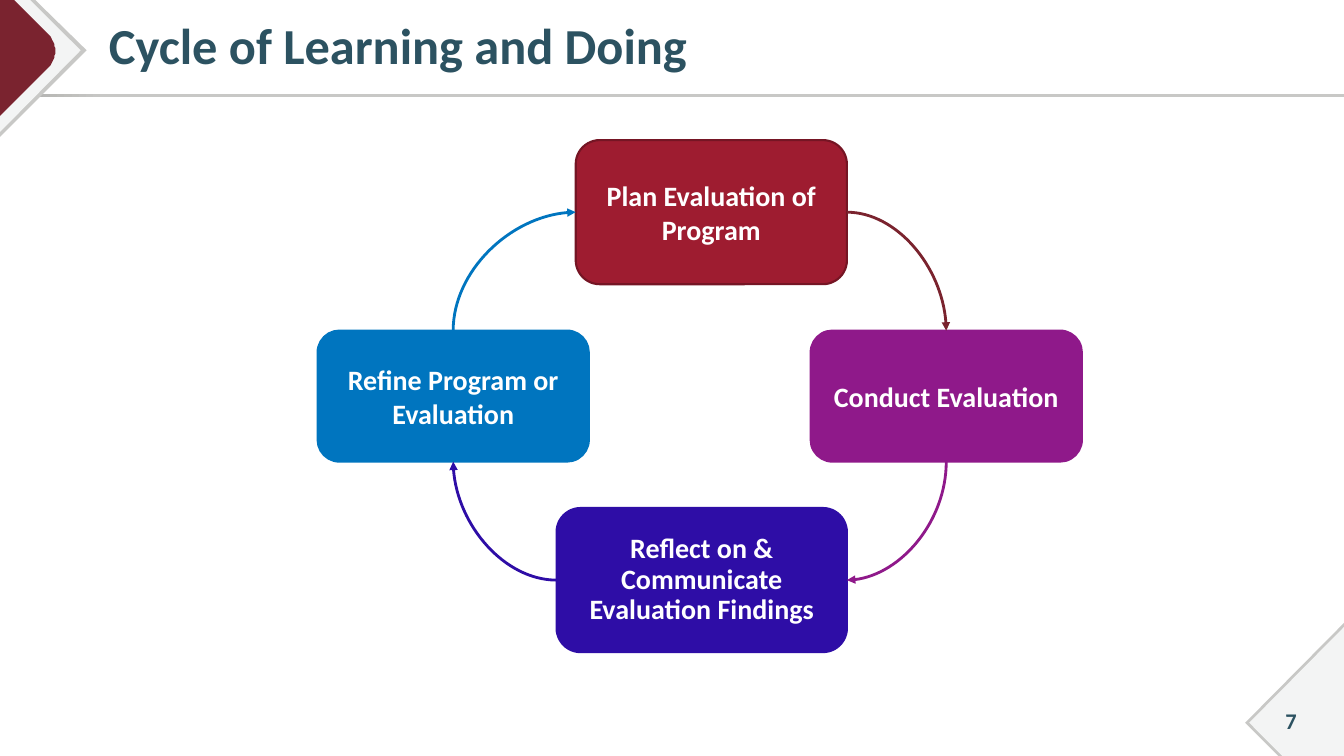
from dataclasses import dataclass

from lxml.etree import SubElement
from pptx import Presentation
from pptx.dml.color import RGBColor
from pptx.enum.shapes import MSO_CONNECTOR as Link, MSO_SHAPE as Shape
from pptx.enum.text import MSO_ANCHOR as Anchor, MSO_AUTO_SIZE as Fit, PP_ALIGN as Align
from pptx.oxml.ns import qn
from pptx.util import Emu, Pt

PX = 9144  # 100 px to the inch
HUES = {
    "white": "FFFFFF", "grey": "C8C8C6", "dusk": "ABABA8", "pale": "F3F4F4",
    "wine": "7A232F", "slate": "2C5261", "red": "9E1C30", "rim": "751524",
    "rust": "7A232E", "plum": "8F198A", "navy": "2E0DA6", "blue": "0075BF",
}


@dataclass
class Step:
    text: str
    box: tuple[int, int, int, int]
    fill: str
    rim: str
    arc: str
    space: float = 1.0


@dataclass
class Panel:
    fill: str
    points: list[tuple[float, float]]


def px(size: float) -> Emu:
    return Emu(round(size * PX))


def hue(name: str) -> RGBColor:
    return RGBColor.from_string(HUES[name])


def bend(p: tuple, q: tuple, r: tuple, s: tuple, count: int = 16) -> list[tuple[float, float]]:
    """Points along a cubic curve."""
    steps = [i / count for i in range(count + 1)]
    return [tuple((1 - t) ** 3 * a + 3 * t * (1 - t) ** 2 * b + 3 * t * t * (1 - t) * c + t ** 3 * d
                  for a, b, c, d in zip(p, q, r, s)) for t in steps]


def write(shape, text: str, size: int, color: str, align: Align, space: float = 1.0) -> None:
    frame = shape.text_frame
    frame.text = text
    frame.word_wrap = True
    frame.auto_size = Fit.NONE
    frame.vertical_anchor = Anchor.MIDDLE
    para = frame.paragraphs[0]
    para.alignment = align
    para.line_spacing = space
    font = para.font
    font.name, font.size, font.bold = "Calibri", Pt(size), True
    font.color.rgb = hue(color)


def draw_panel(shapes, panel: Panel) -> None:
    first, *rest = panel.points
    pen = shapes.build_freeform(*first, scale=PX)
    pen.add_line_segments(rest, close=True)
    shape = pen.convert_to_shape()
    shape.shadow.inherit = False
    shape.fill.solid()
    shape.fill.fore_color.rgb = hue(panel.fill)
    shape.line.fill.background()


def draw_step(shapes, step: Step):
    shape = shapes.add_shape(Shape.ROUNDED_RECTANGLE, *map(px, step.box))
    shape.shadow.inherit = False
    shape.fill.solid()
    shape.fill.fore_color.rgb = hue(step.fill)
    shape.line.color.rgb = hue(step.rim)
    shape.line.width = Pt(1.5)
    write(shape, step.text, 20, "white", Align.CENTER, step.space)
    return shape


def draw_arc(shapes, start, end, turn: int, color: str) -> None:
    """Quarter arc between two boxes, turned clockwise by quarter turns."""
    arc = shapes.add_connector(Link.CURVE, 0, 0, 0, 0)
    arc.begin_connect(start, 3 - turn)
    arc.end_connect(end, -turn % 4)
    mid_x, mid_y = (arc.begin_x + arc.end_x) // 2, (arc.begin_y + arc.end_y) // 2
    wide, high = arc.width, arc.height
    if turn % 2:
        wide, high = high, wide
    arc.left, arc.top = Emu(mid_x - wide // 2), Emu(mid_y - high // 2)
    arc.width, arc.height = wide, high
    props = arc.element.spPr
    frame = props.find(qn("a:xfrm"))
    for flip in ("flipH", "flipV"):
        frame.attrib.pop(flip, None)
    frame.set("rot", str(turn * 90 * 60000))
    props.find(qn("a:prstGeom")).set("prst", "curvedConnector2")
    arc.line.color.rgb = hue(color)
    arc.line.width = Pt(2)
    SubElement(props.find(qn("a:ln")), qn("a:tailEnd"), type="triangle")
    SubElement(props, qn("a:effectLst"))


PANELS = [
    Panel("grey", [(0, 0), (35, 0), (86, 50), (0, 136)]),
    Panel("pale", [(0, 0), (30, 0), (80, 50), (0, 131)]),
    Panel("wine", [(0, 0), (14, 0), *bend((48, 34), (57, 43), (57, 58), (48, 67)), (0, 115)]),
    Panel("grey", [(1333, 618), (1333, 750), (1268, 750), (1235, 717)]),
    Panel("pale", [(1333, 622), (1333, 750), (1272, 750), (1239, 717)]),
]
STEPS = [  # clockwise from the top
    Step("Plan Evaluation of Program", (571, 139, 269, 143), "red", "rim", "rust"),
    Step("Conduct Evaluation", (804, 328, 269, 130), "plum", "plum", "plum"),
    Step("Reflect on & Communicate Evaluation Findings", (552, 504, 288, 143),
         "navy", "navy", "navy", 0.9),
    Step("Refine Program or Evaluation", (315, 328, 269, 130), "blue", "blue", "blue"),
]


def main() -> None:
    deck = Presentation()
    deck.slide_width, deck.slide_height = px(1333), px(750)
    slide = deck.slides.add_slide(deck.slide_layouts[5])
    shapes = slide.shapes

    # Title
    title = shapes.title
    title.left, title.top, title.width, title.height = map(px, (88, 5, 1212, 86))
    write(title, "Cycle of Learning and Doing", 36, "slate", Align.LEFT, 0.9)
    title.text_frame.margin_left = px(20)

    # Rule under the title
    rule = shapes.add_shape(Shape.RECTANGLE, *map(px, (0, 93, 1333, 3)))
    rule.shadow.inherit = False
    rule.line.fill.background()
    rule.fill.gradient()
    rule.fill.gradient_angle = 0
    for stop, name, place in zip(rule.fill.gradient_stops, ("dusk", "grey"), (0, 0.08)):
        stop.color.rgb = hue(name)
        stop.position = place

    # Corner panels and page number
    for panel in PANELS:
        draw_panel(shapes, panel)
    page = shapes.add_textbox(*map(px, (1245, 695, 71, 40)))
    write(page, "7", 16, "slate", Align.CENTER)

    # Cycle
    boxes = [draw_step(shapes, step) for step in STEPS]
    for turn, step in enumerate(STEPS):
        draw_arc(shapes, boxes[turn], boxes[(turn + 1) % len(boxes)], turn, step.arc)

    deck.save("out.pptx")


if __name__ == "__main__":
    main()
